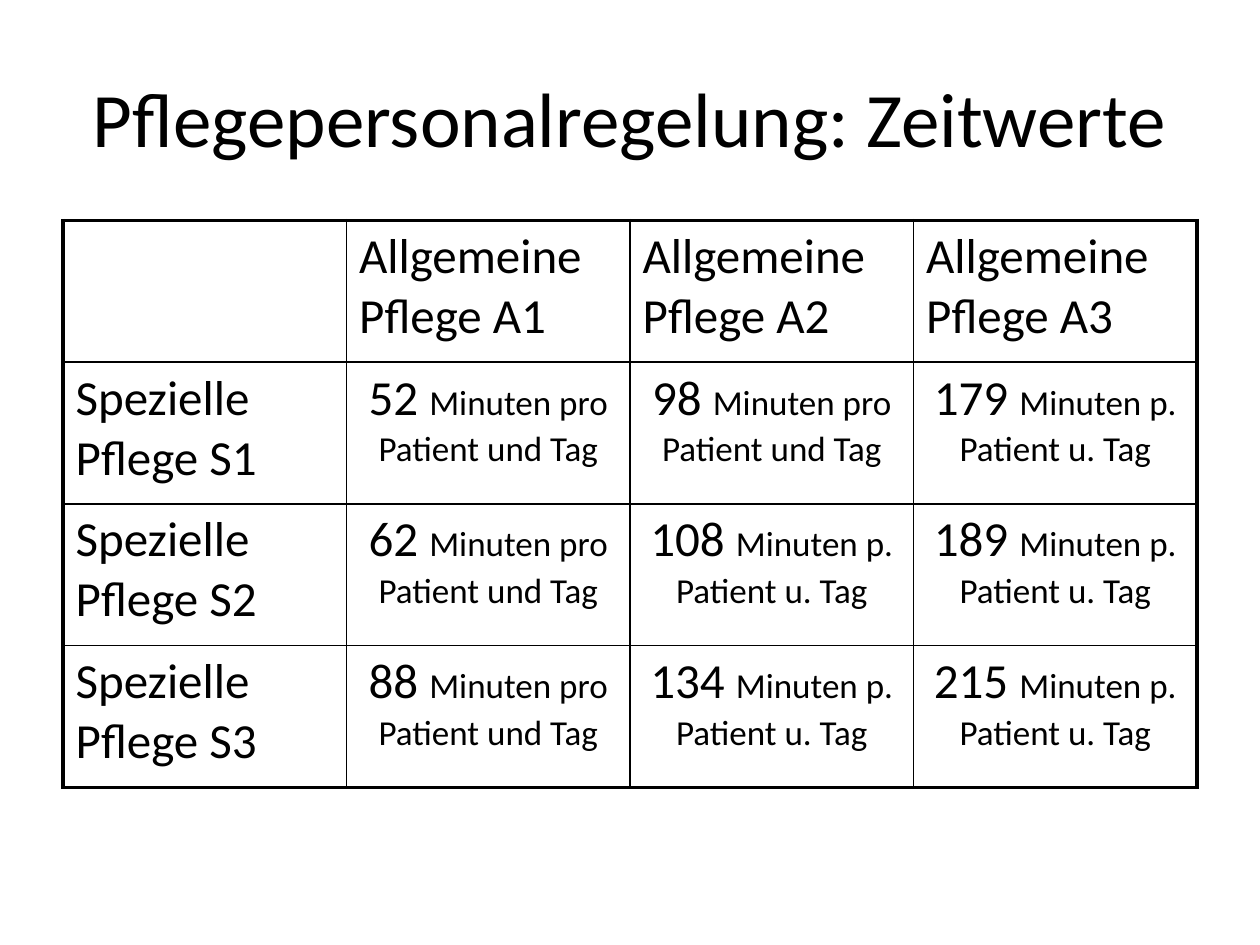
"""Build a slide with a table of nursing minutes per care level."""
from dataclasses import dataclass

from lxml import etree
from pptx import Presentation
from pptx.dml.color import RGBColor
from pptx.enum.text import MSO_ANCHOR, PP_ALIGN
from pptx.oxml.ns import qn
from pptx.util import Pt

LEFT, CENTER = PP_ALIGN.LEFT, PP_ALIGN.CENTER
MIDDLE = MSO_ANCHOR.MIDDLE


@dataclass(frozen=True)
class Theme:
    font: str = "Calibri"
    ink: str = "000000"
    title_size: float = 44
    label_size: float = 28
    unit_size: float = 20
    inner_line: float = 1
    outer_line: float = 2.25


@dataclass(frozen=True)
class Box:
    left: float
    top: float
    width: float
    height: float

    def lengths(self) -> tuple:
        return Pt(self.left), Pt(self.top), Pt(self.width), Pt(self.height)


@dataclass(frozen=True)
class CareLevel:
    name: str
    minutes: tuple[int, ...]


THEME = Theme()
TITLE_BOX = Box(36, 21.6, 648, 90)
TABLE_BOX = Box(36, 126, 648, 324)
GENERAL_LEVELS = ("A1", "A2", "A3")
SPECIAL_LEVELS = (
    CareLevel("S1", (52, 98, 179)),
    CareLevel("S2", (62, 108, 189)),
    CareLevel("S3", (88, 134, 215)),
)


def add_span(para, text: str, *, size: float = THEME.label_size, align=LEFT) -> None:
    para.alignment = align
    span = para.add_run()
    span.text = text
    span.font.name = THEME.font
    span.font.size = Pt(size)
    span.font.color.rgb = RGBColor.from_string(THEME.ink)


def set_border(cell, side: str, width: float) -> None:
    properties = cell._tc.get_or_add_tcPr()
    line = etree.SubElement(properties, qn(f"a:ln{side}"), w=str(Pt(width)))
    fill = etree.SubElement(line, qn("a:solidFill"))
    etree.SubElement(fill, qn("a:srgbClr"), val=THEME.ink)


def frame_cell(cell, row: int, column: int, last_row: int, last_column: int) -> None:
    outer_sides = {
        "L": column == 0,
        "R": column == last_column,
        "T": row == 0,
        "B": row == last_row,
    }
    for side, is_outer in outer_sides.items():
        set_border(cell, side, THEME.outer_line if is_outer else THEME.inner_line)
    cell.fill.background()


def add_title(page, text: str) -> None:
    frame = page.shapes.add_textbox(*TITLE_BOX.lengths()).text_frame
    frame.word_wrap = True
    frame.vertical_anchor = MIDDLE
    add_span(frame.paragraphs[0], text, size=THEME.title_size, align=CENTER)


def add_minutes(para, minutes: int) -> None:
    unit = "Minuten pro Patient und Tag" if minutes < 100 else "Minuten p. Patient u. Tag"
    add_span(para, f"{minutes} ", align=CENTER)
    add_span(para, unit, size=THEME.unit_size, align=CENTER)


def add_care_table(page) -> None:
    row_count, column_count = len(SPECIAL_LEVELS) + 1, len(GENERAL_LEVELS) + 1
    table = page.shapes.add_table(row_count, column_count, *TABLE_BOX.lengths()).table
    table.first_row = table.horz_banding = False
    for row in range(row_count):
        for column in range(column_count):
            frame_cell(table.cell(row, column), row, column, row_count - 1, column_count - 1)

    def para_at(row: int, column: int):
        return table.cell(row, column).text_frame.paragraphs[0]

    for column, name in enumerate(GENERAL_LEVELS, start=1):
        add_span(para_at(0, column), f"Allgemeine Pflege {name}")
    for row, level in enumerate(SPECIAL_LEVELS, start=1):
        add_span(para_at(row, 0), f"Spezielle Pflege {level.name}")
        for column, minutes in enumerate(level.minutes, start=1):
            add_minutes(para_at(row, column), minutes)


def main() -> None:
    deck = Presentation()
    deck.slide_width, deck.slide_height = Pt(720), Pt(540)
    page = deck.slides.add_slide(deck.slide_layouts[6])
    add_title(page, "Pflegepersonalregelung: Zeitwerte")
    add_care_table(page)
    deck.save("out.pptx")


if __name__ == "__main__":
    main()
